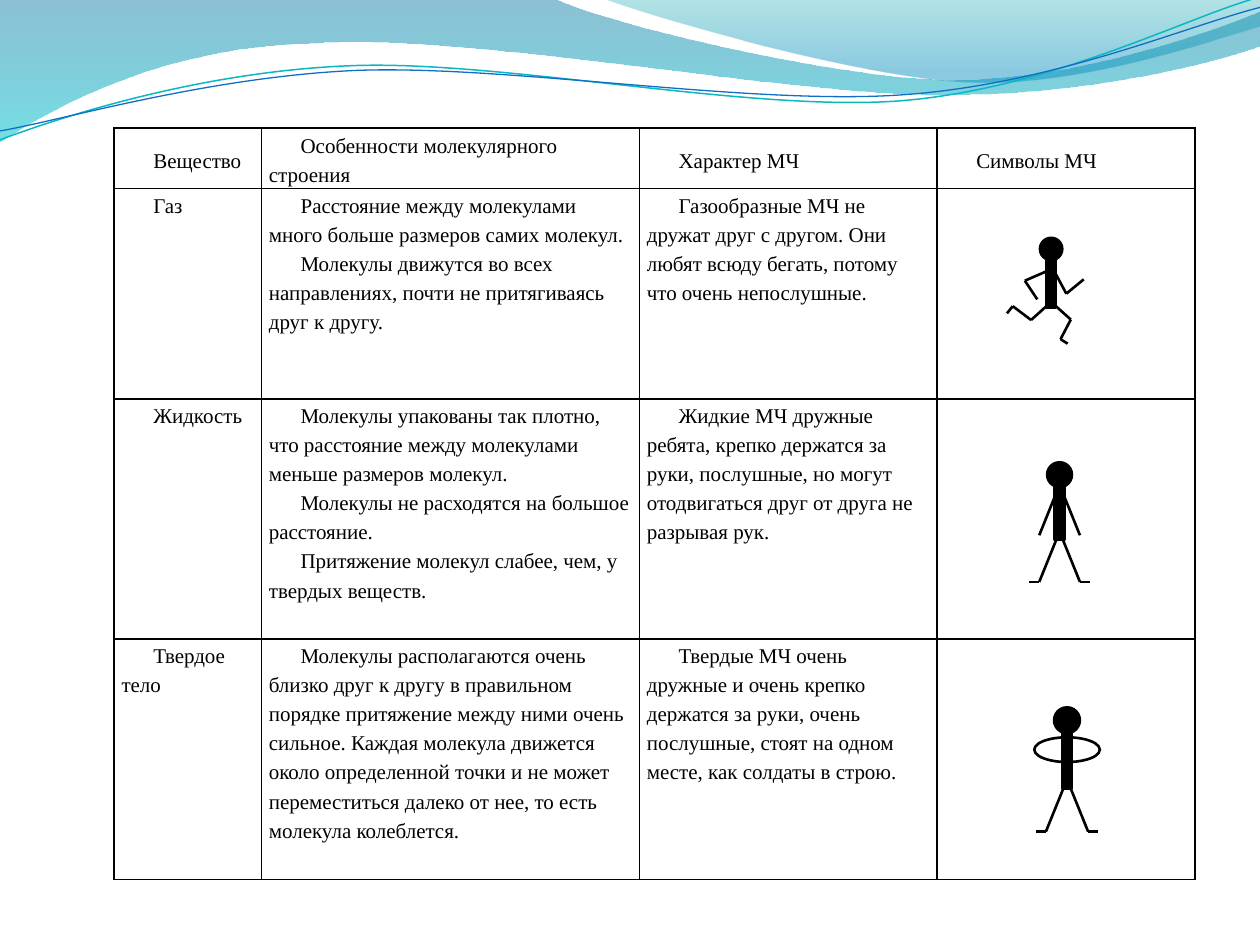
from dataclasses import dataclass

from lxml import etree
from pptx import Presentation
from pptx import util as u
from pptx.dml.color import RGBColor
from pptx.enum import shapes, text
from pptx.oxml.ns import qn


@dataclass(frozen=True)
class Theme:
    ink: str = "000000"
    teal_line: str = "0AB8BF"
    blue_line: str = "0F6FC6"
    # gradient stops: colour, position, opacity in percent
    back_wave: tuple = (("0074A1", 0, 45), ("00C6CF", 1, 55))
    front_wave: tuple = (("00A1A9", 0, 30), ("008BBF", 0.8, 45))
    font: str = "Times New Roman"
    size: int = 12
    figure_line: float = 1.5
    border: float = 1


theme = Theme()
ink = RGBColor.from_string(theme.ink)

deck = Presentation()
deck.slide_width, deck.slide_height = u.Cm(25.4), u.Cm(19.05)
slide = deck.slides.add_slide(deck.slide_layouts[6])


def draw_wave(start, segments, close):
    """Join straight (x, y) and cubic (x1, y1, x2, y2, x, y) segments, in cm."""
    points = [(u.Cm(x), u.Cm(y)) for segment in segments
              for x, y in zip(segment[::2], segment[1::2])]
    builder = slide.shapes.build_freeform(u.Cm(start[0]), u.Cm(start[1]))
    builder.add_line_segments(points, close=close)
    wave = builder.convert_to_shape()
    wave.shadow.inherit = False
    strokes = iter(list(wave._element.iter(qn("a:lnTo"))))
    for segment in segments:
        stroke = next(strokes)
        if len(segment) == 6:
            stroke.addprevious(curve := etree.Element(qn("a:cubicBezTo")))
            for point in (stroke, next(strokes), next(strokes)):
                curve.append(point[0])
                point.getparent().remove(point)
    return wave


# Filled waves along the top
bands = [
    (theme.back_wave, (0, 0), [
        (11.18, -0.03), (12.09, 0.43, 16.87, 1.6, 19.25, 1.6),
        (21.67, 1.6, 24.33, 0.66, 25.4, 0.23), (25.43, 0.91),
        (24.97, 1.12, 22.1, 1.93, 18.95, 1.91), (15.8, 1.91, 9.7, 0.71, 6.53, 0.86),
        (3.28, 0.91, 1.17, 2.11, -0.03, 2.87)]),
    (theme.front_wave, (12.17, -0.03), [
        (12.93, 0.28, 17.32, 1.57, 19.53, 1.65),
        (21.74, 1.75, 24.41, 0.81, 25.4, 0.53), (25.4, 0)]),
]
for stops, start, segments in bands:
    band = draw_wave(start, segments, close=True)
    band.fill.gradient()
    band.fill.gradient_angle = 270
    for stop, (color, position, _) in zip(band.fill.gradient_stops, stops):
        stop.color.rgb = RGBColor.from_string(color)
        stop.position = position
    for color, (_, _, opacity) in zip(band._element.spPr.iter(qn("a:srgbClr")), stops):
        etree.SubElement(color, qn("a:alpha"), val=str(opacity * 1000))
    band.line.fill.background()

# Thin lines under the waves, tilted a little
strands = [
    (theme.teal_line, 0.85, (-0.05, 2.22), [
        (1.19, 1.82, 4.02, 1.04, 7.05, 1.06), (10.05, 1.07, 15.02, 2.37, 18.08, 2.29),
        (21.13, 2.2, 23.87, 0.91, 25.41, 0.55)]),
    (theme.blue_line, 0.75, (-0.04, 2.04), [
        (1.16, 1.9, 4.18, 1.15, 7.2, 1.16), (10.25, 1.19, 15.13, 2.25, 18.18, 2.17),
        (21.21, 2.1, 23.93, 1.06, 25.45, 0.75)]),
]
for color, width, start, segments in strands:
    strand = draw_wave(start, segments, close=False)
    strand.rotation = -2.7
    strand.fill.background()
    strand.line.color.rgb = RGBColor.from_string(color)
    strand.line.width = u.Pt(width)

# Table of states of matter; each cell is a list of paragraphs
states = [
    [["Вещество"], ["Особенности молекулярного строения"], ["Характер МЧ"], ["Символы МЧ"]],
    [["Газ"],
     ["Расстояние между молекулами много больше размеров самих молекул.",
      "Молекулы движутся во всех направлениях, почти не притягиваясь друг к другу."],
     ["Газообразные МЧ не дружат друг с другом. Они любят всюду бегать, потому что "
      "очень непослушные."], []],
    [["Жидкость"],
     ["Молекулы упакованы так плотно, что расстояние между молекулами меньше размеров молекул.",
      "Молекулы не расходятся на большое расстояние.",
      "Притяжение молекул слабее, чем, у твердых веществ."],
     ["Жидкие МЧ дружные ребята, крепко держатся за руки, послушные, но могут "
      "отодвигаться друг от друга не разрывая рук."], []],
    [["Твердое тело"],
     ["Молекулы располагаются очень близко друг к другу в правильном порядке притяжение "
      "между ними очень сильное. Каждая молекула движется около определенной точки и не "
      "может переместиться далеко от нее, то есть молекула колеблется."],
     ["Твердые МЧ очень дружные и очень крепко держатся за руки, очень послушные, стоят "
      "на одном месте, как солдаты в строю."], []],
]
column_widths = [2.97, 7.62, 6, 5.2]
row_heights = [1.22, 4.24, 4.84, 4.85]
table = slide.shapes.add_table(
    len(row_heights), len(column_widths), u.Cm(2.3), u.Cm(2.58),
    u.Cm(sum(column_widths)), u.Cm(sum(row_heights))).table
table.first_row = table.horz_banding = False
for column, width in zip(table.columns, column_widths):
    column.width = u.Cm(width)
for row, height, contents in zip(table.rows, row_heights, states):
    row.height = u.Cm(height)
    for cell, paragraphs in zip(row.cells, contents):
        cell.margin_left = cell.margin_right = u.Cm(0.15)
        cell.margin_top = cell.margin_bottom = 0
        cell.vertical_anchor = (text.MSO_ANCHOR.MIDDLE if contents is states[0]
                                else text.MSO_ANCHOR.TOP)
        for side in ("a:lnL", "a:lnR", "a:lnT", "a:lnB"):
            border = etree.SubElement(cell._tc.get_or_add_tcPr(), qn(side),
                                      w=str(u.Pt(theme.border)))
            paint = etree.SubElement(border, qn("a:solidFill"))
            etree.SubElement(paint, qn("a:srgbClr"), val=theme.ink)
        cell.fill.background()
        if not paragraphs:
            continue
        cell.text_frame.text = "\n".join(paragraphs)
        for paragraph in cell.text_frame.paragraphs:
            paragraph.line_spacing = 1.25
            paragraph._p.get_or_add_pPr().set("indent", str(u.Cm(0.64)))
            for run in paragraph.runs:
                run.font.name, run.font.size = theme.font, u.Pt(theme.size)
                run.font.color.rgb = ink

# Stick figures: limbs are chains of joints in cm, measured from the head's centre
running = [
    [(-0.06, 1.24), (-0.45, 1.59), (-0.86, 1.28), (-0.99, 1.44)],
    [(0.06, 1.24), (0.44, 1.58), (0.21, 2.02), (0.37, 2.12)],
    [(-0.06, 0.48), (-0.59, 0.71), (-0.31, 1.13)],
    [(0.06, 0.48), (0.34, 1), (0.73, 0.68)],
]
legs = [[(side * x, y) for x, y in ((0.05, 1.27), (0.41, 2.16), (0.61, 2.16))]
        for side in (1, -1)]
arms = [[(side * 0.04, 0.3), (side * 0.41, 1.22)] for side in (1, -1)]
# Parts: preset, top, width, height, filled
head = (shapes.MSO_SHAPE.OVAL, -0.25, 0.5, 0.5, True)
torso = (shapes.MSO_SHAPE.RECTANGLE, 0.18, 0.2, 1.14, True)
joined_arms = (shapes.MSO_SHAPE.OVAL, 0.33, 1.27, 0.48, False)
figures = [
    (21.19, 5.02, 0.9, [head, torso], running),
    (21.36, 9.57, 1, [head, torso], legs + arms),
    (21.51, 14.52, 1.04, [head, torso, joined_arms], legs),
]
for center_x, center_y, scale, parts, limbs in figures:
    figure = slide.shapes.add_group_shape().shapes
    for preset, top, width, height, filled in parts:
        part = figure.add_shape(
            preset, u.Cm(center_x - scale * width / 2), u.Cm(center_y + scale * top),
            u.Cm(scale * width), u.Cm(scale * height))
        part.shadow.inherit = False
        if filled:
            part.fill.solid()
            part.fill.fore_color.rgb = ink
        else:
            part.fill.background()
        part.line.color.rgb = ink
        part.line.width = u.Pt(theme.figure_line)
    for limb in limbs:
        joints = [(u.Cm(center_x + scale * x), u.Cm(center_y + scale * y)) for x, y in limb]
        for begin, end in zip(joints, joints[1:]):
            bone = figure.add_connector(shapes.MSO_CONNECTOR.STRAIGHT, *begin, *end)
            bone.line.color.rgb = ink
            bone.line.width = u.Pt(theme.figure_line)
            etree.SubElement(bone._element.spPr, qn("a:effectLst"))

deck.save("out.pptx")
